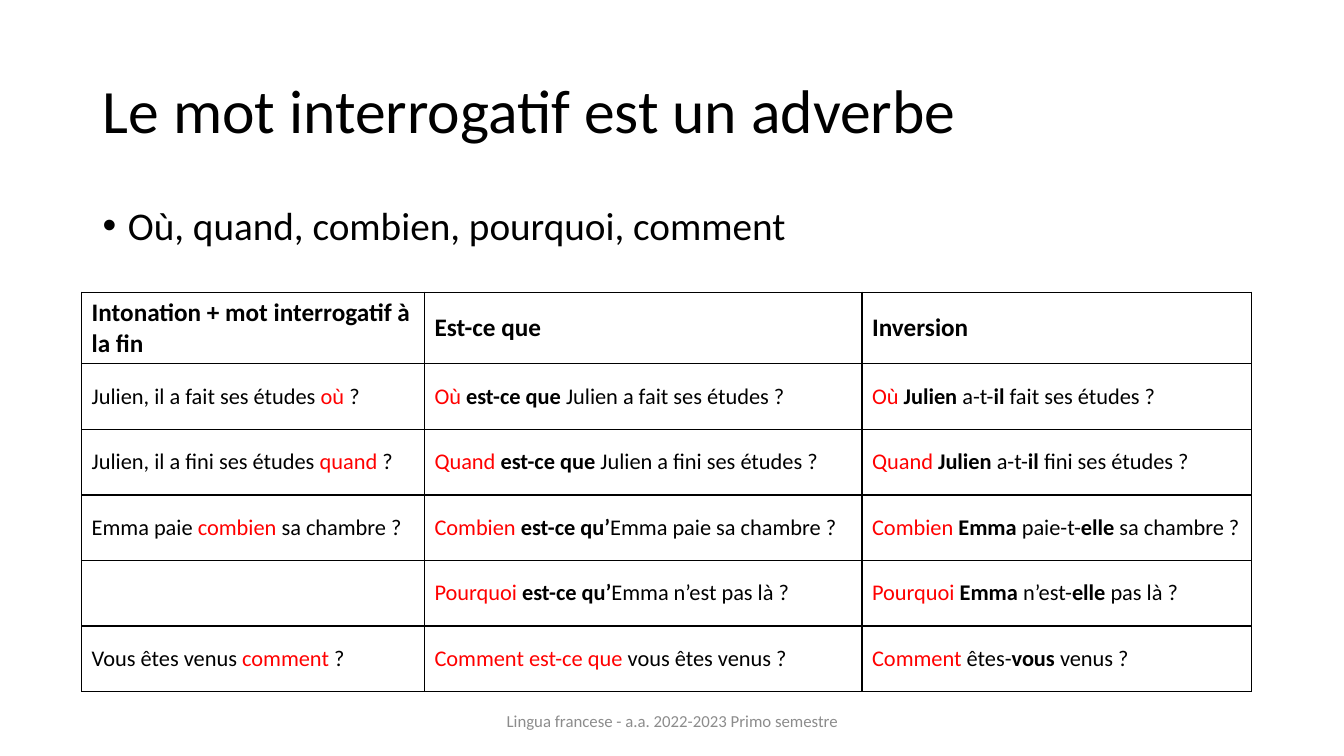
from lxml.etree import SubElement
from pptx import Presentation
from pptx.dml.color import RGBColor
from pptx.enum.text import MSO_ANCHOR, PP_ALIGN
from pptx.oxml.ns import qn
from pptx.util import Pt

PX = 9144  # 100 px to the inch
FONT = "Calibri"
COLORS = {"text": "000000", "accent": "FF0000", "footer": "8C8C8C",
          "cell": "FFFFFF", "border": "000000"}

# Each piece of text is (wording, style)
PLAIN, BOLD, RED = "plain", "bold", "red"

TITLE = "Le mot interrogatif est un adverbe"
BULLET = "Où, quand, combien, pourquoi, comment"
FOOTER = "Lingua francese - a.a. 2022-2023 Primo semestre"
HEADERS = ["Intonation + mot interrogatif à la fin", "Est-ce que", "Inversion"]
QUESTIONS = [
    [[("Julien, il a fait ses études ", PLAIN), ("où", RED), (" ?", PLAIN)],
     [("Où ", RED), ("est-ce que ", BOLD), ("Julien a fait ses études ?", PLAIN)],
     [("Où ", RED), ("Julien", BOLD), (" a-t-", PLAIN), ("il", BOLD),
      (" fait ses études ?", PLAIN)]],
    [[("Julien, il a fini ses études ", PLAIN), ("quand", RED), (" ?", PLAIN)],
     [("Quand ", RED), ("est-ce que ", BOLD), ("Julien a fini ses études ?", PLAIN)],
     [("Quand ", RED), ("Julien", BOLD), (" a-t-", PLAIN), ("il", BOLD),
      (" fini ses études ?", PLAIN)]],
    [[("Emma paie ", PLAIN), ("combien", RED), (" sa chambre ?", PLAIN)],
     [("Combien ", RED), ("est-ce qu’", BOLD), ("Emma paie sa chambre ?", PLAIN)],
     [("Combien ", RED), ("Emma", BOLD), (" paie-t-", PLAIN), ("elle", BOLD),
      (" sa chambre ?", PLAIN)]],
    [[],
     [("Pourquoi ", RED), ("est-ce qu’", BOLD), ("Emma n’est pas là ?", PLAIN)],
     [("Pourquoi ", RED), ("Emma", BOLD), (" n’est-", PLAIN), ("elle", BOLD),
      (" pas là ?", PLAIN)]],
    [[("Vous êtes venus ", PLAIN), ("comment", RED), (" ?", PLAIN)],
     [("Comment est-ce que ", RED), ("vous êtes venus ?", PLAIN)],
     [("Comment", RED), (" êtes-", PLAIN), ("vous", BOLD), (" venus ?", PLAIN)]],
]

TABLE_LEFT, TABLE_TOP = 81, 290
COLUMN_WIDTHS = [340, 434, 386]
HEADER_HEIGHT, ROW_HEIGHT = 71, 65


def format_span(span, size, color, bold=False):
    span.font.name = FONT
    span.font.size = Pt(size)
    span.font.bold = bold
    span.font.color.rgb = RGBColor.from_string(COLORS[color])


def add_text(slide, bounds, text, size, color="text", anchor=MSO_ANCHOR.MIDDLE):
    """Add a one-paragraph text box and return its paragraph."""
    box = slide.shapes.add_textbox(*(length * PX for length in bounds))
    frame = box.text_frame
    frame.word_wrap = True
    frame.vertical_anchor = anchor
    frame.text = text
    para = frame.paragraphs[0]
    format_span(para.runs[0], size, color)
    return para


def add_bullet(para, indent):
    properties = para._p.get_or_add_pPr()
    properties.set("marL", str(indent * PX))
    properties.set("indent", str(-indent * PX))
    SubElement(properties, qn("a:buFont"), typeface="Arial")
    SubElement(properties, qn("a:buChar"), char="•")


def style_cell(cell):
    """Give a cell thin borders, a plain fill and middle alignment."""
    cell.vertical_anchor = MSO_ANCHOR.MIDDLE
    properties = cell._tc.get_or_add_tcPr()
    for side in ("lnL", "lnR", "lnT", "lnB"):
        line = SubElement(properties, qn(f"a:{side}"), w=str(Pt(1)))
        fill = SubElement(line, qn("a:solidFill"))
        SubElement(fill, qn("a:srgbClr"), val=COLORS["border"])
    cell.fill.solid()
    cell.fill.fore_color.rgb = RGBColor.from_string(COLORS["cell"])


def add_question_table(slide):
    rows = [[[(header, BOLD)] for header in HEADERS]] + QUESTIONS
    heights = [HEADER_HEIGHT] + [ROW_HEIGHT] * len(QUESTIONS)
    table = slide.shapes.add_table(
        len(rows), len(HEADERS), TABLE_LEFT * PX, TABLE_TOP * PX,
        sum(COLUMN_WIDTHS) * PX, sum(heights) * PX).table
    table.first_row = False
    table.horz_banding = False
    for column, width in zip(table.columns, COLUMN_WIDTHS):
        column.width = width * PX
    for row_index, (row, height) in enumerate(zip(rows, heights)):
        table.rows[row_index].height = height * PX
        size = 18 if row_index == 0 else 16
        for column_index, pieces in enumerate(row):
            cell = table.cell(row_index, column_index)
            style_cell(cell)
            para = cell.text_frame.paragraphs[0]
            for text, style in pieces:
                span = para.add_run()
                span.text = text
                format_span(span, size, "accent" if style == RED else "text",
                            style == BOLD)


def main():
    deck = Presentation()
    deck.slide_width, deck.slide_height = 1333 * PX, 750 * PX
    slide = deck.slides.add_slide(deck.slide_layouts[6])

    title = add_text(slide, (92, 40, 1150, 145), TITLE, 44)
    title.line_spacing = 0.9

    bullet = add_text(slide, (92, 200, 1150, 476), BULLET, 28, anchor=MSO_ANCHOR.TOP)
    bullet.line_spacing = 0.9
    bullet.space_before = Pt(10)
    add_bullet(bullet, 25)

    add_question_table(slide)

    footer = add_text(slide, (442, 695, 450, 40), FOOTER, 12, "footer")
    footer.alignment = PP_ALIGN.CENTER
    deck.save("out.pptx")


if __name__ == "__main__":
    main()
